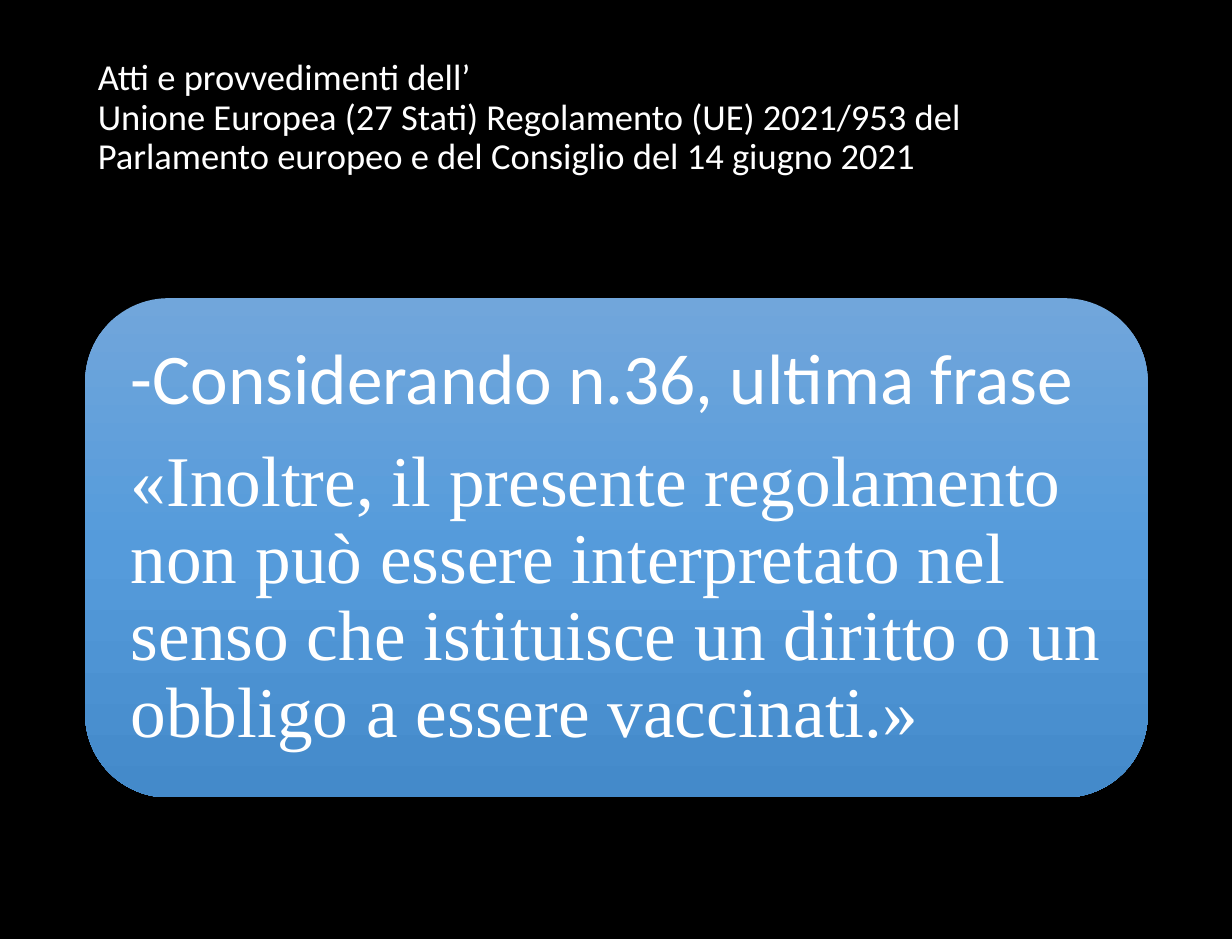
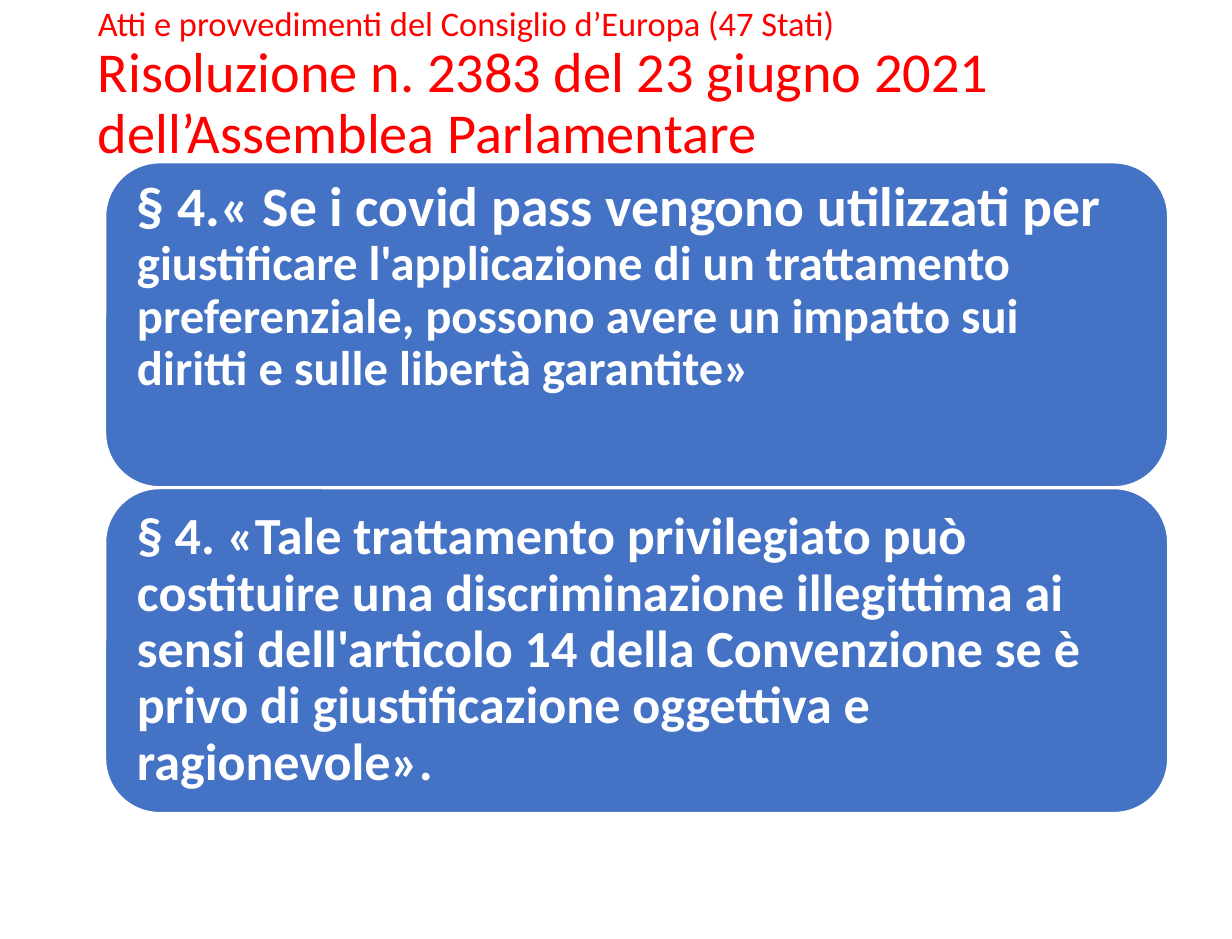
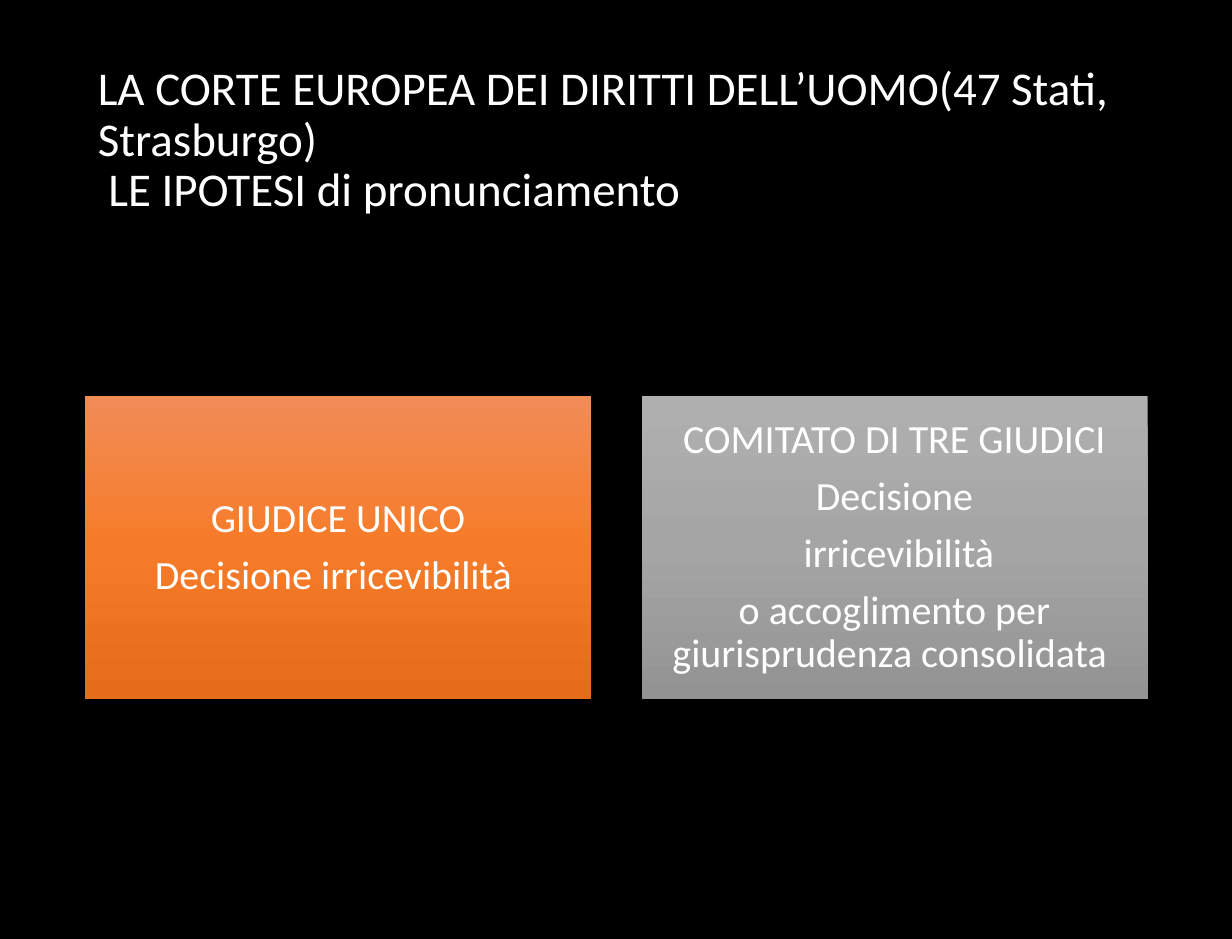
from copy import deepcopy

from pptx import Presentation
from pptx.dml.color import RGBColor
from pptx.enum.shapes import MSO_SHAPE
from pptx.enum.text import MSO_ANCHOR, MSO_AUTO_SIZE, PP_ALIGN
from pptx.oxml.ns import qn
from pptx.util import Cm, Pt

RECTANGLE, ROUNDED = MSO_SHAPE.RECTANGLE, MSO_SHAPE.ROUNDED_RECTANGLE
TOP, MIDDLE = MSO_ANCHOR.TOP, MSO_ANCHOR.MIDDLE
LEFT, CENTER = PP_ALIGN.LEFT, PP_ALIGN.CENTER
NO_AUTOFIT = MSO_AUTO_SIZE.NONE

BLACK = RGBColor(0x00, 0x00, 0x00)
WHITE = RGBColor(0xFF, 0xFF, 0xFF)
RED = RGBColor(0xFF, 0x00, 0x00)
BLUE = RGBColor(0x44, 0x72, 0xC4)
SKY_BLEND = [RGBColor(0x71, 0xA6, 0xDB), RGBColor(0x55, 0x9B, 0xDB), RGBColor(0x44, 0x8A, 0xCA)]
ORANGE_BLEND = [RGBColor(0xF1, 0x8C, 0x57), RGBColor(0xF6, 0x7B, 0x28), RGBColor(0xE5, 0x6C, 0x19)]
GREY_BLEND = [RGBColor(0xAF, 0xAF, 0xAF), RGBColor(0xA5, 0xA5, 0xA5), RGBColor(0x93, 0x93, 0x93)]

BODY_FONT = "Calibri"
QUOTE_FONT = "Times New Roman"
MARGIN = 1.73
CONTENT_WIDTH = 21.56


class SlideBuilder:
    """Hold the deck style and the current slide."""

    def __init__(self):
        self.deck = Presentation()
        self.deck.slide_width, self.deck.slide_height = Cm(25), Cm(19.05)
        self.page = None

    def new_page(self, background):
        """Start a title-only slide on a plain background."""
        self.page = self.deck.slides.add_slide(self.deck.slide_layouts[5])
        self.page.background.fill.solid()
        self.page.background.fill.fore_color.rgb = background

    def fill_text(self, frame, paragraphs, color, align=LEFT, bold=False, spacing=0):
        """Set paragraphs, each a list of (text, size, font) spans."""
        frame.word_wrap = True
        frame.auto_size = NO_AUTOFIT
        for index, spans in enumerate(paragraphs):
            para = frame.paragraphs[0] if index == 0 else frame.add_paragraph()
            para.alignment = align
            para.line_spacing = 0.9
            para.space_before = Pt(0)
            para.space_after = Pt(round(spacing * spans[0][1], 1))
            for text, size, font in spans:
                span = para.add_run()
                span.text = text
                span.font.size = Pt(size)
                span.font.name = font
                span.font.bold = bold
                span.font.color.rgb = color

    def title(self, lines, color, top=1.02, height=3.68):
        """Place the title and set its lines of (text, size)."""
        box = self.page.shapes.title
        box.left, box.top = Cm(MARGIN), Cm(top)
        box.width, box.height = Cm(CONTENT_WIDTH), Cm(height)
        box.text_frame.vertical_anchor = MIDDLE
        self.fill_text(box.text_frame, [[(text, size, BODY_FONT)] for text, size in lines], color)

    def blend(self, shape, colors):
        """Fill a shape with an even top-to-bottom gradient."""
        shape.fill.gradient()
        shape.fill.gradient_angle = 270
        stops = shape._element.spPr.find(qn("a:gradFill")).find(qn("a:gsLst"))
        stops.insert(1, deepcopy(stops[0]))
        for index, (stop, color) in enumerate(zip(shape.fill.gradient_stops, colors)):
            stop.position = index / (len(colors) - 1)
            stop.color.rgb = color

    def card(self, kind, place, fill, paragraphs, inset, align=LEFT, bold=False, anchor=MIDDLE):
        """Add a filled shape with white text."""
        shape = self.page.shapes.add_shape(kind, *(Cm(length) for length in place))
        shape.shadow.inherit = False
        if isinstance(fill, list):
            self.blend(shape, fill)
            shape.line.fill.background()
        else:
            shape.fill.solid()
            shape.fill.fore_color.rgb = fill
            shape.line.color.rgb = WHITE
            shape.line.width = Pt(1)
        frame = shape.text_frame
        frame.vertical_anchor = anchor
        frame.margin_left = frame.margin_right = frame.margin_bottom = Cm(inset)
        frame.margin_top = Cm(0 if anchor == TOP else inset)
        self.fill_text(frame, paragraphs, WHITE, align, bold, spacing=0.35)


def build_regulation(builder):
    """Build the European Union regulation slide."""
    builder.new_page(BLACK)
    builder.title([
        ("Atti e provvedimenti dell’", 21),
        ("Unione Europea (27 Stati) Regolamento (UE) 2021/953 del "
         "Parlamento europeo e del Consiglio del 14 giugno 2021", 21),
    ], WHITE, height=2.77)
    builder.card(ROUNDED, (MARGIN, 6.05, CONTENT_WIDTH, 10.13), SKY_BLEND, [
        [("-Considerando n.36, ultima frase", 41, BODY_FONT)],
        [("«Inoltre, il presente regolamento non può essere interpretato nel senso che "
          "istituisce un diritto o un obbligo a essere vaccinati.»", 41, QUOTE_FONT)],
    ], inset=0.43)


def build_resolution(builder):
    """Build the Council of Europe resolution slide."""
    builder.new_page(WHITE)
    builder.title([
        ("Atti e provvedimenti del Consiglio d’Europa (47 Stati)", 19.8),
        ("Risoluzione n. 2383 del 23 giugno 2021 dell’Assemblea Parlamentare", 32.4),
    ], RED, top=0, height=3.49)
    quotes = [
        ([("§ 4.« Se i covid pass vengono utilizzati per ", 32, BODY_FONT),
          ("giustificare l'applicazione di un trattamento preferenziale, possono avere un "
           "impatto sui diritti e sulle libertà garantite»", 28, BODY_FONT)], TOP),
        ([("§ 4. «Tale trattamento privilegiato può costituire una discriminazione "
           "illegittima ai sensi dell'articolo 14 della Convenzione se è privo di "
           "giustificazione oggettiva e ragionevole».", 30, BODY_FONT)], MIDDLE),
    ]
    for index, (spans, anchor) in enumerate(quotes):
        builder.card(ROUNDED, (2.14, 3.3 + index * 6.61, CONTENT_WIDTH, 6.58), BLUE,
                     [spans], inset=0.32, bold=True, anchor=anchor)


def build_court(builder):
    """Build the slide on the forms of court decision."""
    builder.new_page(BLACK)
    builder.title([
        ("LA CORTE EUROPEA DEI DIRITTI DELL’UOMO(47 Stati, Strasburgo) ", 27),
        (" LE IPOTESI di pronunciamento", 27),
    ], WHITE)
    panels = [
        (ORANGE_BLEND, ["GIUDICE UNICO", "Decisione irricevibilità "]),
        (GREY_BLEND, ["COMITATO DI TRE GIUDICI", "Decisione", " irricevibilità",
                      "o accoglimento per giurisprudenza consolidata "]),
    ]
    width = 10.27
    pitch = CONTENT_WIDTH - width
    for index, (colors, lines) in enumerate(panels):
        builder.card(RECTANGLE, (MARGIN + index * pitch, 8.03, width, 6.16), colors,
                     [[(line, 23, BODY_FONT)] for line in lines], inset=0.25, align=CENTER)


def main():
    """Build and save the deck."""
    builder = SlideBuilder()
    build_regulation(builder)
    build_resolution(builder)
    build_court(builder)
    builder.deck.save("out.pptx")


if __name__ == "__main__":
    main()
